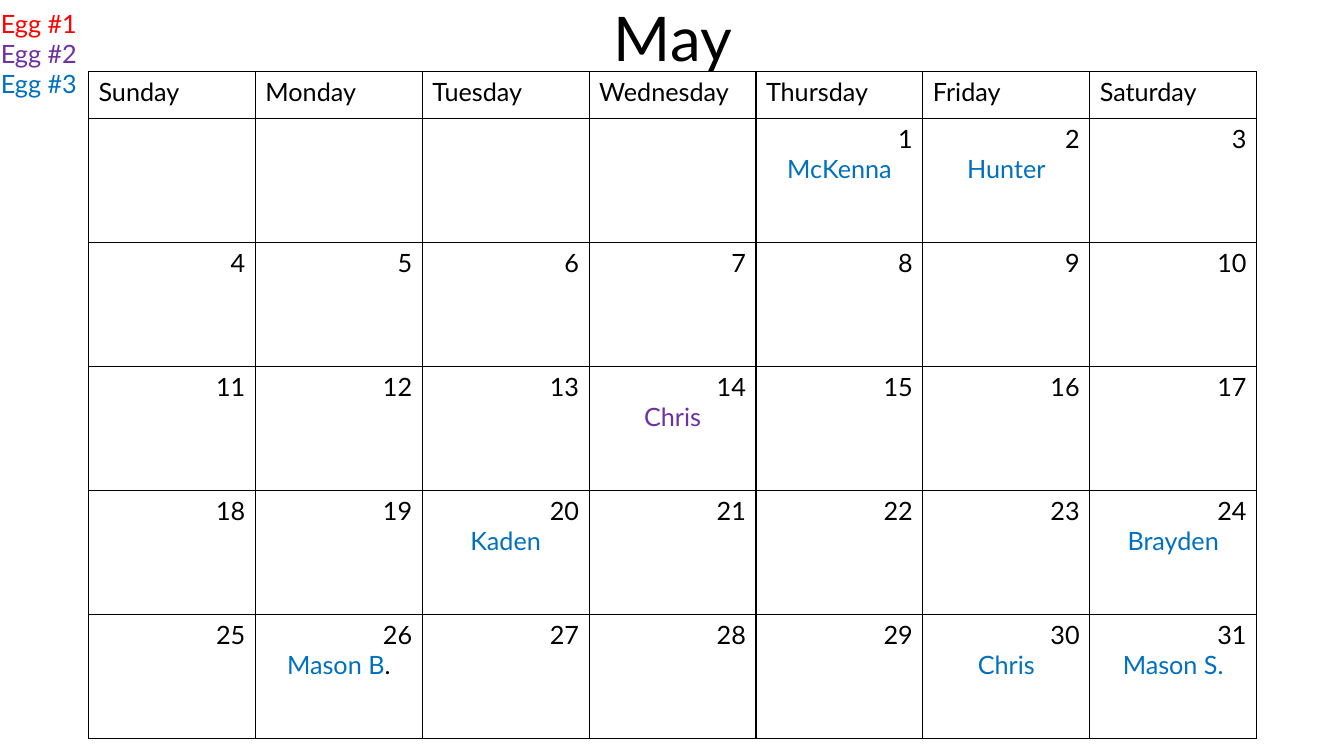
from lxml.etree import SubElement as Sub
from pptx import Presentation
from pptx.dml.color import RGBColor as RGB
from pptx.enum.text import MSO_AUTO_SIZE as Fit, PP_ALIGN as Align
from pptx.oxml.ns import qn
from pptx.util import Pt

BLACK = RGB(0x00, 0x00, 0x00)
RED = RGB(0xFF, 0x00, 0x00)
PURPLE = RGB(0x70, 0x30, 0xA0)
BLUE = RGB(0x00, 0x70, 0xC0)

DAYS = ["Sunday", "Monday", "Tuesday", "Wednesday", "Thursday", "Friday", "Saturday"]
START = DAYS.index("Thursday")
LAST = 31
NAMES = {
    1: [("McKenna", BLUE)],
    2: [("Hunter", BLUE)],
    14: [("Chris", PURPLE)],
    20: [("Kaden", BLUE)],
    24: [("Brayden", BLUE)],
    26: [("Mason B", BLUE), (".", BLACK)],
    30: [("Chris", BLUE)],
    31: [("Mason S.", BLUE)],
}
EGGS = [("Egg #1", RED), ("Egg #2", PURPLE), ("Egg #3", BLUE)]


class Page:
    font = "Lato"
    size = 18

    def __init__(self, slide):
        self.slide = slide

    def put(self, frame, lines, align, size=size):
        frame.text = "\n".join("" for line in lines)
        for para, parts, side in zip(frame.paragraphs, lines, align):
            para.alignment = side
            for text, color in parts:
                run = para.add_run()
                run.text = text
                run.font.name = self.font
                run.font.size = Pt(size)
                run.font.color.rgb = color

    def label(self, box, lines, side, size=size):
        shape = self.slide.shapes.add_textbox(*map(Pt, box))
        frame = shape.text_frame
        frame.word_wrap = True
        frame.auto_size = Fit.SHAPE_TO_FIT_TEXT
        self.put(frame, lines, [side] * len(lines), size)

    def edge(self, cell):
        props = cell._tc.get_or_add_tcPr()
        for tag in ("a:lnL", "a:lnR", "a:lnT", "a:lnB"):
            line = Sub(props, qn(tag), w=str(Pt(1)))
            fill = Sub(line, qn("a:solidFill"))
            Sub(fill, qn("a:srgbClr"), val=str(BLACK))
        cell.fill.background()

    def grid(self, left, top, wide, heights):
        count = len(DAYS)
        frame = self.slide.shapes.add_table(
            len(heights), count, Pt(left), Pt(top), Pt(wide * count), Pt(sum(heights)))
        table = frame.table
        table.first_row = table.horz_banding = False
        for col in table.columns:
            col.width = Pt(wide)
        for row, high in zip(table.rows, heights):
            row.height = Pt(high)
        for cell in table.iter_cells():
            self.edge(cell)
        return table

    def month(self, table):
        for col, day in enumerate(DAYS):
            self.put(table.cell(0, col).text_frame, [[(day, BLACK)]], [Align.LEFT])
        for date in range(1, LAST + 1):
            week, col = divmod(START + date - 1, len(DAYS))
            lines = [[(str(date), BLACK)]]
            if date in NAMES:
                lines.append(NAMES[date])
            frame = table.cell(week + 1, col).text_frame
            self.put(frame, lines, [Align.RIGHT, Align.CENTER])


def main():
    deck = Presentation()
    deck.slide_width, deck.slide_height = Pt(960), Pt(540)
    page = Page(deck.slides.add_slide(deck.slide_layouts[6]))
    page.month(page.grid(63.2, 51.1, 119.2, [33.6] + [88.6] * 5))
    page.label((388.8, -3.6, 183.6, 60.5), [[("May", BLACK)]], Align.CENTER, 44)
    page.label((-6.5, 2.2, 186.5, 72.7), [[egg] for egg in EGGS], Align.LEFT)
    deck.save("out.pptx")


if __name__ == "__main__":
    main()
